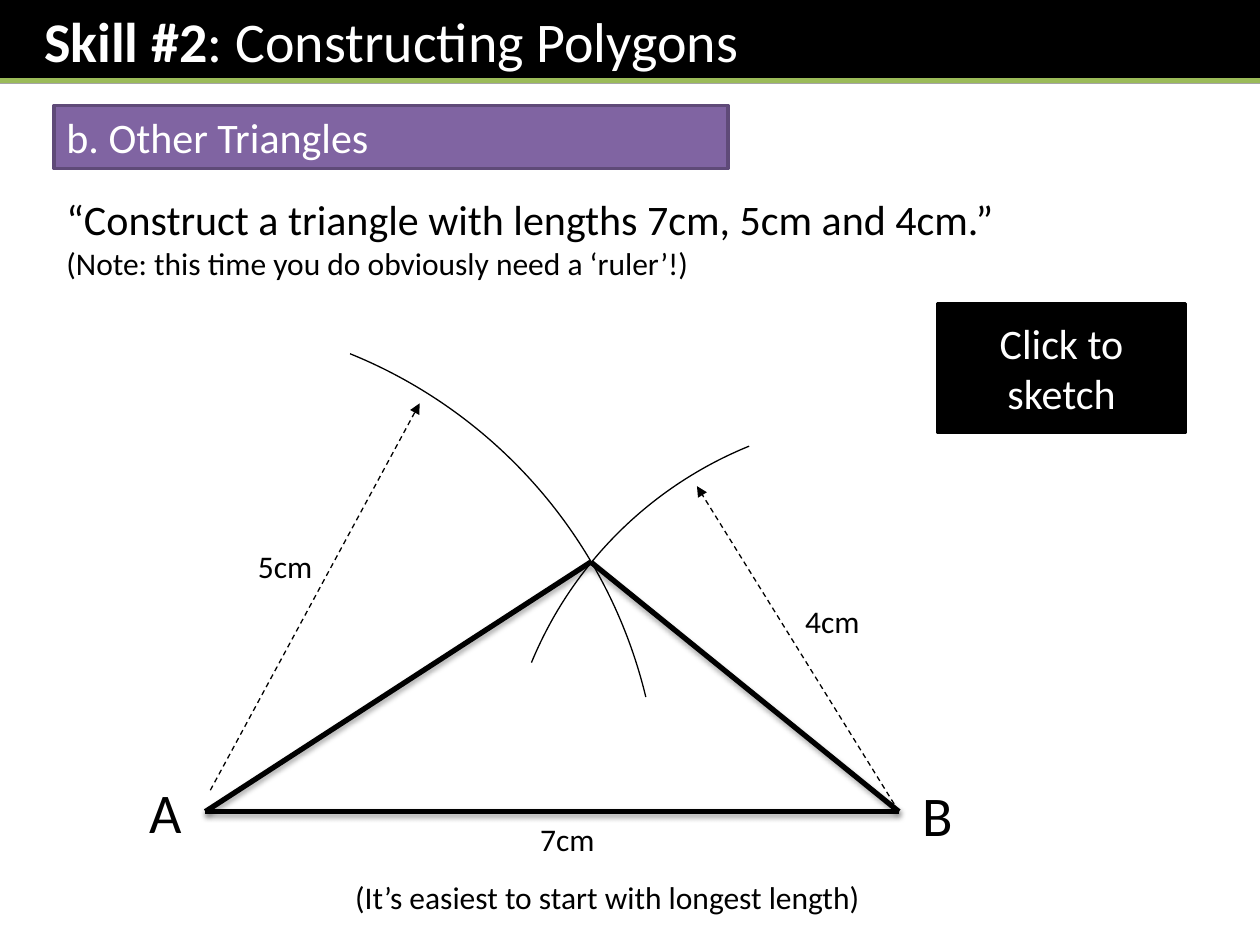
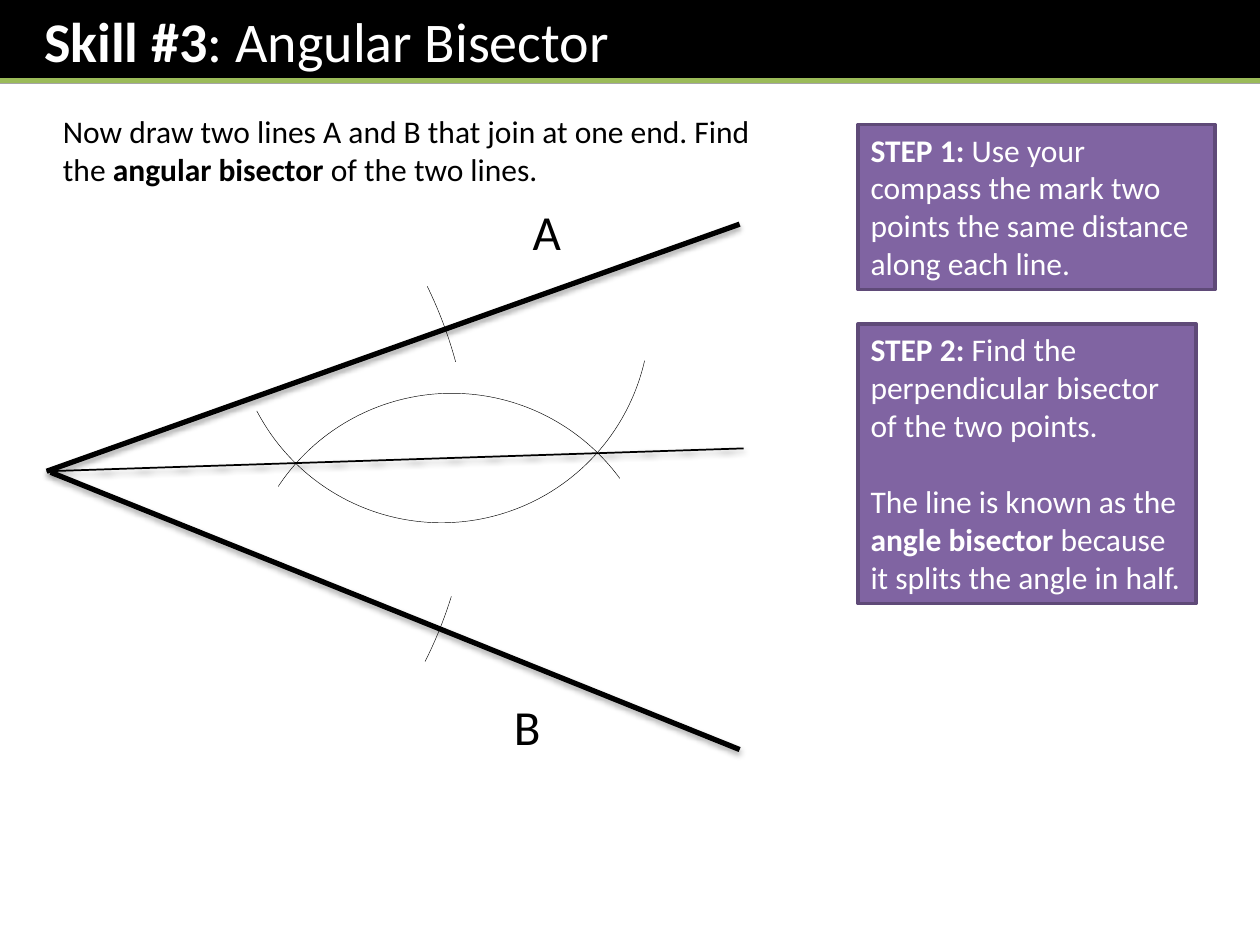
from lxml.etree import SubElement
from pptx import Presentation
from pptx.dml.color import RGBColor
from pptx.enum.dml import MSO_LINE
from pptx.enum.shapes import MSO_CONNECTOR, MSO_SHAPE
from pptx.enum.text import MSO_ANCHOR, MSO_AUTO_SIZE, PP_ALIGN
from pptx.oxml.ns import qn
from pptx.util import Cm, Pt

FONT = "Calibri"
WIDTH, HEIGHT = 25.4, 19.05
BAND_HEIGHT, RULE_Y = 1.68, 1.63
COLORS = {
    "black": "000000",
    "white": "FFFFFF",
    "green": "9BBB59",
    "purple": "8064A2",
    "dark purple": "5F4A78",
}
PLAIN = {"ink": "black"}
CENTERED = {"ink": "black", "align": PP_ALIGN.CENTER}
PANEL = {"ink": "white", "fill": "purple", "edge": "dark purple"}
BUTTON = {"ink": "white", "fill": "black", "edge": "black",
          "align": PP_ALIGN.CENTER, "anchor": MSO_ANCHOR.MIDDLE}

A, B, APEX = (4.14, 16.36), (18.12, 16.36), (11.91, 11.33)
VERTEX = (0.94, 9.5)

# Text marked with ** is bold; arcs hold centre, radius, start and end degrees.
SLIDES = [
    {
        "title": "**Skill #2**: Constructing Polygons",
        "sides": [(A, B, 3), (A, APEX, 3), (B, APEX, 3)],
        "radii": [((4.24, 15.93), (8.46, 8.13)), (B, (14.05, 9.8))],
        "arc weight": 0.75,
        "arcs": [((3.3, 16.4), 10, 292.07, 346.43),
                 ((18.11, 16.41), 8, 202.42, 247.93)],
        "texts": [
            ((2.54, 15.54, 1.6, 1.63), [("A", 32)], CENTERED),
            ((18.11, 15.6, 1.6, 1.63), [("B", 32)], CENTERED),
            ((1.09, 3.78, 21.79, 2.06), [
                ("“Construct a triangle with lengths 7cm, 5cm and 4cm.”", 24),
                ("(Note: this time you do obviously need a ‘ruler’!)", 18),
            ], PLAIN),
            ((18.9, 6.12, 5, 2.59), [("Click to sketch", 24)], BUTTON),
            ((1.09, 2.13, 13.59, 1.27), [("b. Other Triangles", 24)], PANEL),
            ((10.64, 16.41, 2.79, 1.02), [("7cm", 18)], PLAIN),
            ((4.95, 10.9, 2.79, 1.02), [("5cm", 18)], PLAIN),
            ((15.98, 12.01, 2.79, 1.02), [("4cm", 18)], PLAIN),
            ((6.91, 17.58, 11.63, 1.02),
             [("(It’s easiest to start with longest length)", 18)], PLAIN),
        ],
    },
    {
        "title": "**Skill #3**: Angular Bisector",
        "sides": [(VERTEX, (14.91, 4.52), 3),
                  ((1.02, 9.52), (14.91, 15.11), 3),
                  (VERTEX, (14.99, 9.04), 1)],
        "radii": [],
        "arc weight": 0.25,
        "arcs": [((8.9, 6.34), 4.2, 12.83, 152.41),
                 ((9.11, 12.13), 4.2, 213.55, 323.73),
                 ((0.98, 9.51), 8.5, 333.92, 344.9),
                 ((0.98, 9.51), 8.5, 17.19, 26.75)],
        "texts": [
            ((17.3, 2.51, 7.19, 3.33), [
                ("**STEP 1: **Use your compass the mark two points "
                 "the same distance along each line.", 18),
            ], PANEL),
            ((17.3, 6.53, 6.81, 5.64), [
                ("**STEP 2: **Find the perpendicular bisector "
                 "of the two points.", 18),
                ("The line is known as the **angle bisector **because "
                 "it splits the angle in half.", 18),
            ], {**PANEL, "gap": 22}),
            ((10.49, 3.94, 1.19, 1.45), [("A", 28)], PLAIN),
            ((10.11, 13.92, 1.19, 1.45), [("B", 28)], PLAIN),
            ((1.02, 2.13, 15.29, 1.8), [
                ("Now draw two lines A and B that join at one end. Find the "
                 "**angular bisector **of the two lines.", 18),
            ], PLAIN),
        ],
    },
]


def color(name):
    return RGBColor.from_string(COLORS[name])


def paint(shape, fill):
    shape.fill.solid()
    shape.fill.fore_color.rgb = color(fill)


def stroke(line, name, weight):
    line.color.rgb = color(name)
    line.width = Pt(weight)


def write(frame, paragraphs, ink, align=PP_ALIGN.LEFT,
          anchor=MSO_ANCHOR.TOP, gap=0):
    frame.word_wrap = True
    frame.auto_size = MSO_AUTO_SIZE.NONE
    frame.vertical_anchor = anchor
    for index, (text, size) in enumerate(paragraphs):
        paragraph = frame.add_paragraph() if index else frame.paragraphs[0]
        paragraph.alignment = align
        paragraph.space_before = Pt(gap if index else 0)
        font = paragraph.font
        font.name, font.size, font.color.rgb = FONT, Pt(size), color(ink)
        for part, words in enumerate(text.split("**")):
            if words:
                run = paragraph.add_run()
                run.text = words
                run.font.bold = part % 2 == 1


def add_title(slide, text):
    title = slide.shapes.title
    title.left, title.top = Cm(0), Cm(0)
    title.width, title.height = Cm(WIDTH), Cm(BAND_HEIGHT)
    paint(title, "black")
    frame = title.text_frame
    frame.margin_left, frame.margin_right = Cm(0.89), Cm(0.25)
    frame.margin_top = frame.margin_bottom = Cm(0.13)
    write(frame, [(text, 32)], "white")
    add_line(slide, (0, RULE_Y), (WIDTH, RULE_Y), 3, "green")


def add_line(slide, start, end, weight, name="black", shadow=False):
    connector = slide.shapes.add_connector(
        MSO_CONNECTOR.STRAIGHT, *map(Cm, start + end))
    stroke(connector.line, name, weight)
    effects = SubElement(connector._element.spPr, qn("a:effectLst"))
    if shadow:
        outer = SubElement(effects, qn("a:outerShdw"), blurRad="40000",
                           dist="23000", dir="5400000", rotWithShape="0")
        shade = SubElement(outer, qn("a:srgbClr"), val=COLORS["black"])
        SubElement(shade, qn("a:alpha"), val="35000")
    return connector


def add_radius(slide, start, end):
    line = add_line(slide, start, end, 0.75).line
    line.dash_style = MSO_LINE.DASH
    SubElement(line._get_or_add_ln(), qn("a:tailEnd"), type="triangle")


def add_arc(slide, center, radius, start, end, weight):
    x, y = center
    arc = slide.shapes.add_shape(
        MSO_SHAPE.ARC, Cm(x - radius), Cm(y - radius),
        Cm(2 * radius), Cm(2 * radius))
    arc.shadow.inherit = False
    arc.fill.background()
    stroke(arc.line, "black", weight)
    for index, degrees in enumerate((start, end)):
        arc.adjustments[index] = degrees * 0.6


def add_text(slide, place, paragraphs, style):
    style = dict(style)
    fill, edge = style.pop("fill", None), style.pop("edge", None)
    place = map(Cm, place)
    if fill:
        box = slide.shapes.add_shape(MSO_SHAPE.RECTANGLE, *place)
        box.shadow.inherit = False
        paint(box, fill)
        stroke(box.line, edge, 2)
    else:
        box = slide.shapes.add_textbox(*place)
    write(box.text_frame, paragraphs, **style)


def main():
    deck = Presentation()
    deck.slide_width, deck.slide_height = Cm(WIDTH), Cm(HEIGHT)
    for content in SLIDES:
        slide = deck.slides.add_slide(deck.slide_layouts[5])
        add_title(slide, content["title"])
        for start, end, weight in content["sides"]:
            add_line(slide, start, end, weight, shadow=True)
        for arc in content["arcs"]:
            add_arc(slide, *arc, content["arc weight"])
        for radius in content["radii"]:
            add_radius(slide, *radius)
        for text in content["texts"]:
            add_text(slide, *text)
    deck.save("out.pptx")


if __name__ == "__main__":
    main()
